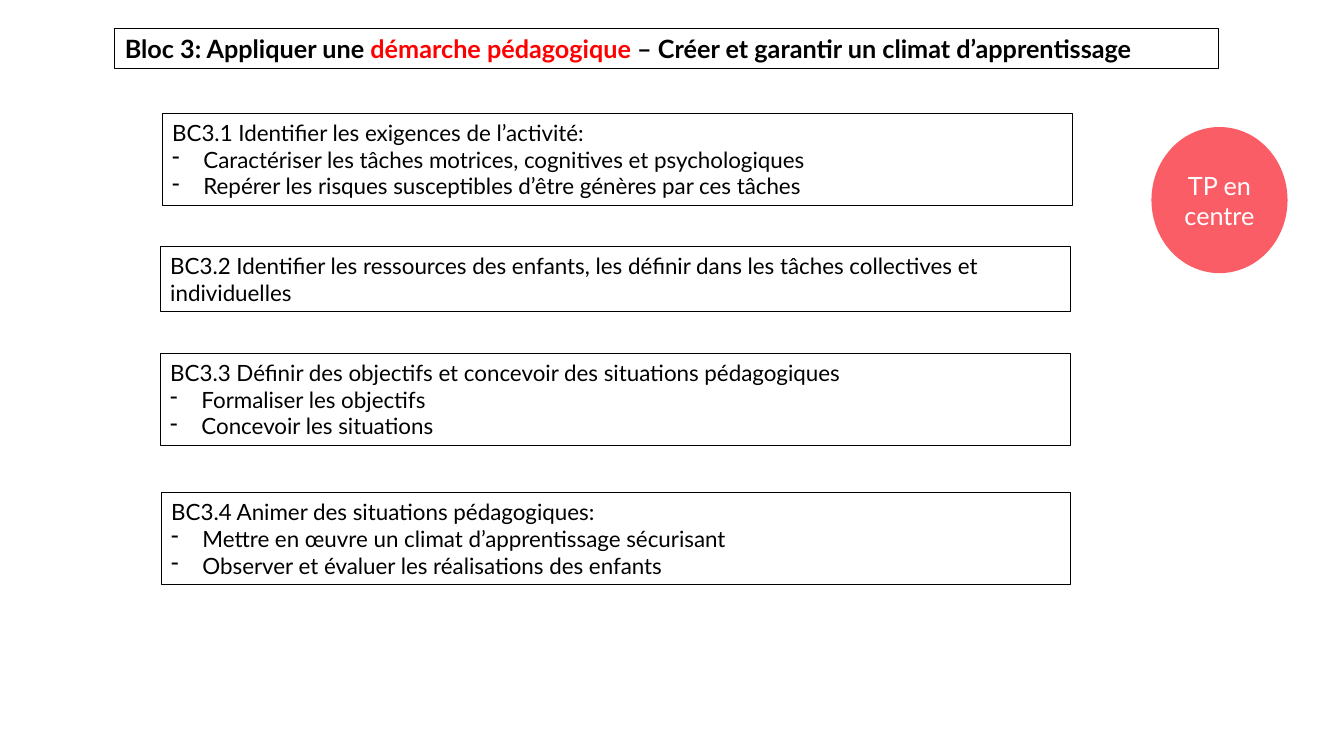
import pptx
import pptx.dml.color
import pptx.enum.shapes
import pptx.enum.text
import pptx.oxml.ns
import pptx.util
from lxml import etree

PX = 9144  # EMU, 100 px to the inch
FONT = "Lato"
BLACK = pptx.dml.color.RGBColor(0x00, 0x00, 0x00)
RED = pptx.dml.color.RGBColor(0xFF, 0x00, 0x00)
WHITE = pptx.dml.color.RGBColor(0xFF, 0xFF, 0xFF)
CORAL = pptx.dml.color.RGBColor(0xFB, 0x5D, 0x66)

DASH_INDENT = 31
TITLE = [
    ("Bloc 3: Appliquer une ", BLACK),
    ("démarche pédagogique ", RED),
    ("– Créer et garantir un climat d’apprentissage", BLACK),
]
# Each skill: box in px (left, top, width, height), heading, dashed items
SKILLS = [
    ((161, 113, 903, 91), "BC3.1 Identifier les exigences de l’activité:",
     ["Caractériser les tâches motrices, cognitives et psychologiques",
      "Repérer les risques susceptibles d’être génères par ces tâches"]),
    ((159, 245, 903, 64),
     "BC3.2 Identifier les ressources des enfants, les définir dans les "
     "tâches collectives et individuelles", []),
    ((159, 351, 903, 91),
     "BC3.3 Définir des objectifs et concevoir des situations pédagogiques",
     ["Formaliser les objectifs", "Concevoir les situations"]),
    ((160, 489, 902, 91), "BC3.4 Animer des situations pédagogiques:",
     ["Mettre en œuvre un climat d’apprentissage sécurisant",
      "Observer et évaluer les réalisations des enfants"]),
]


def to_emu(box):
    return [length * PX for length in box]


def set_font(font, size, color, bold=False):
    font.name = FONT
    font.size = pptx.util.Pt(size)
    font.color.rgb = color
    font.bold = bold


def add_outlined_box(slide, box):
    """Add a black-edged text box and return its text frame."""
    shape = slide.shapes.add_textbox(*to_emu(box))
    shape.line.color.rgb = BLACK
    shape.line.width = pptx.util.Pt(0.75)
    shape.text_frame.word_wrap = True
    return shape.text_frame


def add_dash(paragraph):
    properties = paragraph._p.get_or_add_pPr()
    properties.set("marL", str(DASH_INDENT * PX))
    properties.set("indent", str(-DASH_INDENT * PX))
    bullet = etree.SubElement(properties, pptx.oxml.ns.qn("a:buChar"))
    bullet.set("char", "-")


def add_title(slide, box):
    paragraph = add_outlined_box(slide, box).paragraphs[0]
    for text, color in TITLE:
        run = paragraph.add_run()
        run.text = text
        set_font(run.font, 18, color, bold=True)


def add_skill(slide, box, heading, items):
    text_frame = add_outlined_box(slide, box)
    text_frame.text = "\n".join([heading, *items])
    for paragraph in text_frame.paragraphs[1:]:
        add_dash(paragraph)
    for paragraph in text_frame.paragraphs:
        set_font(paragraph.runs[0].font, 16, BLACK)


def add_badge(slide, box, text):
    badge = slide.shapes.add_shape(
        pptx.enum.shapes.MSO_SHAPE.OVAL, *to_emu(box))
    badge.shadow.inherit = False
    badge.fill.solid()
    badge.fill.fore_color.rgb = CORAL
    badge.line.fill.background()
    text_frame = badge.text_frame
    text_frame.word_wrap = True
    text_frame.vertical_anchor = pptx.enum.text.MSO_ANCHOR.MIDDLE
    text_frame.text = text
    paragraph = text_frame.paragraphs[0]
    paragraph.alignment = pptx.enum.text.PP_ALIGN.CENTER
    set_font(paragraph.runs[0].font, 18, WHITE)


def main():
    presentation = pptx.Presentation()
    presentation.slide_width, presentation.slide_height = to_emu((1333, 750))
    slide = presentation.slides.add_slide(presentation.slide_layouts[6])
    add_title(slide, (114, 28, 1095, 40))
    for box, heading, items in SKILLS:
        add_skill(slide, box, heading, items)
    add_badge(slide, (1142, 126, 135, 145), "TP en centre")
    presentation.save("out.pptx")


if __name__ == "__main__":
    main()
